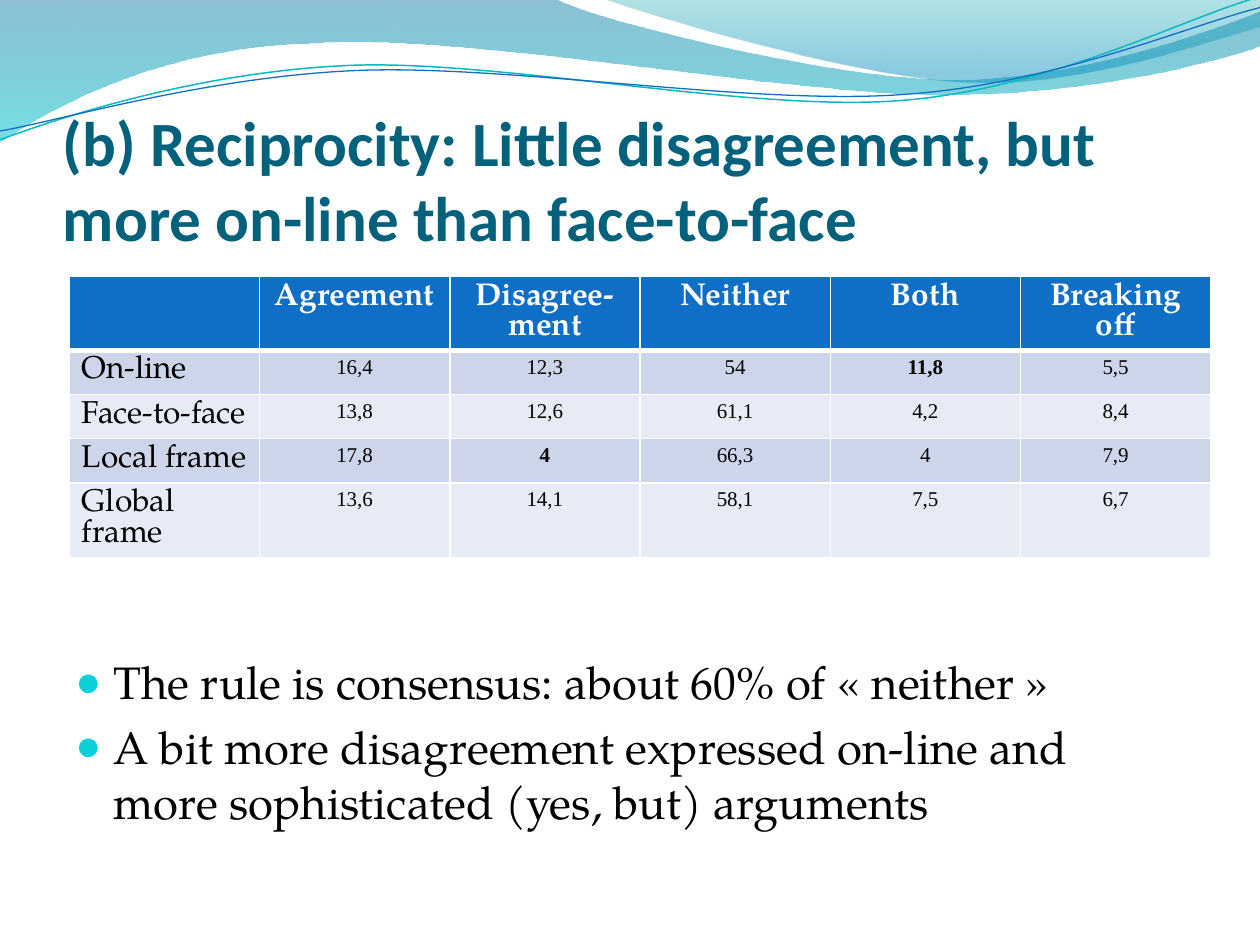
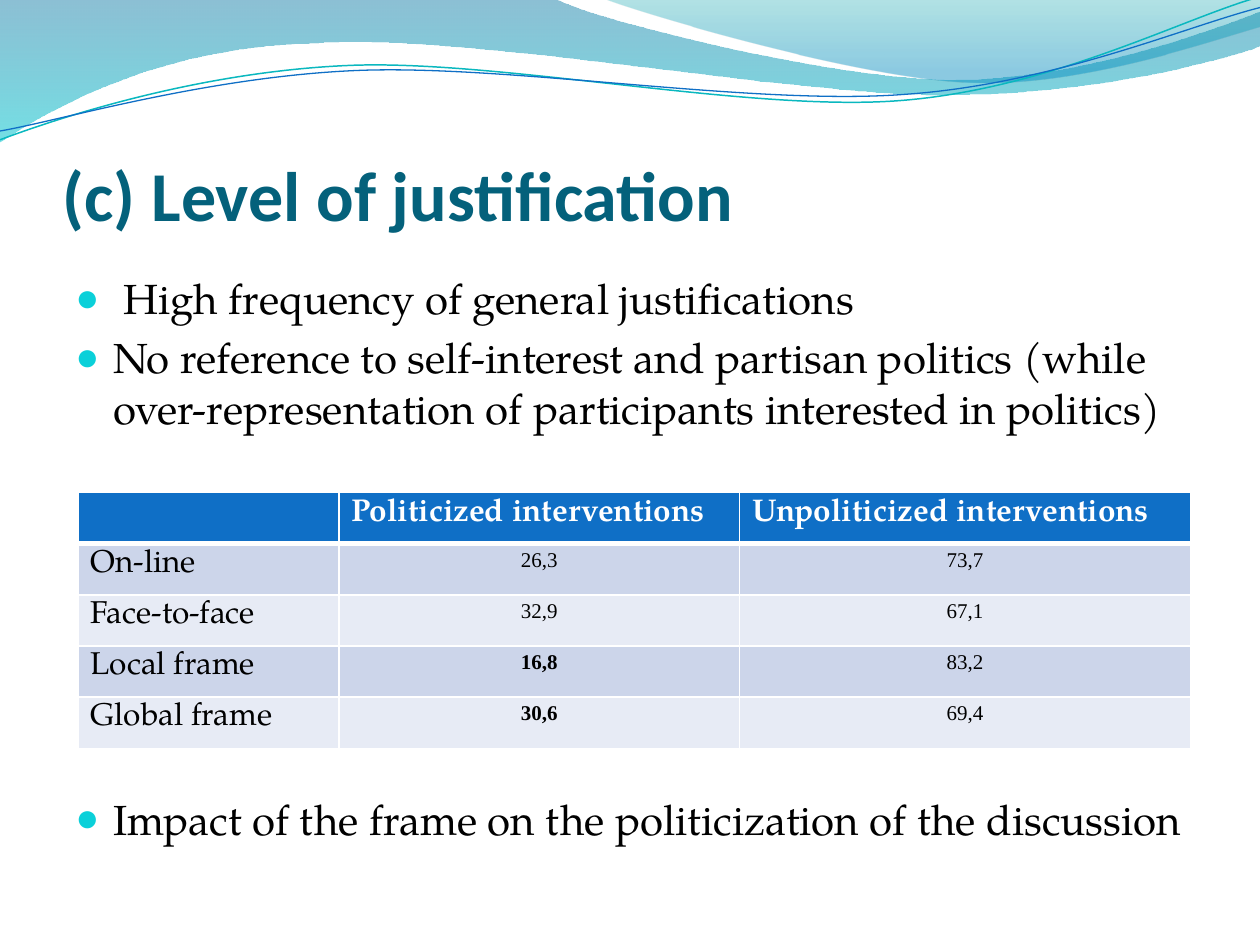
import pptx
import pptx.dml.color
import pptx.enum.text
import pptx.oxml
import pptx.oxml.ns
import pptx.util
from pptx.util import Inches

RGB = pptx.dml.color.RGBColor
ALIGN = pptx.enum.text.PP_ALIGN
ANCHOR = pptx.enum.text.MSO_ANCHOR

TITLE_BLUE = RGB(0x04, 0x61, 0x7B)
HEADER_BLUE = RGB(0x0F, 0x6F, 0xC6)
TEAL_LINE = RGB(0x0A, 0xB8, 0xBF)
BULLET_TEAL = RGB(0x0B, 0xD0, 0xD9)
ROW_DARK = RGB(0xCC, 0xD5, 0xEA)
ROW_LIGHT = RGB(0xE7, 0xEB, 0xF5)
BLACK = RGB(0, 0, 0)
WHITE = RGB(255, 255, 255)
TITLE_FONT, BODY_FONT, NUMBER_FONT = "Calibri", "TeX Gyre Pagella", "Times New Roman"
BODY_LEADING = 1.21
LABEL_LEADING = 17.7

BANDS = [
    {"start": (0, 0),
     "segments": [[(4.4, -0.01)],
                  [(4.76, 0.17), (6.64, 0.63), (7.58, 0.63)],
                  [(8.53, 0.63), (9.58, 0.26), (10, 0.09)],
                  [(10.01, 0.36)],
                  [(9.83, 0.44), (8.7, 0.76), (7.46, 0.75)],
                  [(6.22, 0.75), (3.82, 0.28), (2.57, 0.34)],
                  [(1.29, 0.36), (0.46, 0.83), (-0.01, 1.13)]],
     "stops": [(0, RGB(0x00, 0x74, 0xA1), 45), (1, RGB(0x00, 0xC6, 0xCF), 55)]},
    {"start": (4.79, -0.01),
     "segments": [[(5.09, 0.11), (6.82, 0.62), (7.69, 0.65)],
                  [(8.56, 0.69), (9.61, 0.32), (10, 0.21)],
                  [(10, 0)]],
     "stops": [(0, RGB(0x00, 0xA1, 0xA9), 30), (0.8, RGB(0x00, 0x8B, 0xBF), 45)]},
]
WAVES = [
    {"start": (0, 1.11), "colour": TEAL_LINE, "width": 0.85,
     "segments": [[(0.48, 0.93), (1.58, 0.57), (2.77, 0.52)],
                  [(3.95, 0.47), (5.93, 0.89), (7.13, 0.8)],
                  [(8.33, 0.71), (9.38, 0.15), (9.98, -0.02)]]},
    {"start": (0, 1.04), "colour": HEADER_BLUE, "width": 0.75,
     "segments": [[(0.47, 0.96), (1.64, 0.61), (2.83, 0.56)],
                  [(4.03, 0.51), (5.97, 0.84), (7.17, 0.75)],
                  [(8.36, 0.67), (9.41, 0.21), (10, 0.06)]]},
]

SLIDES = [
    {"title": "(b) Reciprocity: Little disagreement, but more on-line than face-to-face",
     "title_size": 36, "title_height": 1.25, "body_size": 26, "body_inset": 3.07,
     "bullets": [("The rule is consensus: about 60% of «\u00a0neither\u00a0»", 0),
                 ("A bit more disagreement expressed on-line and more sophisticated "
                  "(yes, but) arguments", 5.2)],
     "table_at": (0.55, 2.19), "columns": [1.51] * 6,
     "heights": [0.58, 0.35, 0.35, 0.35, 0.59], "header_align": ALIGN.CENTER,
     "rows": [["", "Agreement", "Disagree-ment", "Neither", "Both", "Breaking off"],
              ["On-line", "16,4", "12,3", "54", "11,8", "5,5"],
              ["Face-to-face", "13,8", "12,6", "61,1", "4,2", "8,4"],
              ["Local frame", "17,8", "4", "66,3", "4", "7,9"],
              ["Global frame", "13,6", "14,1", "58,1", "7,5", "6,7"]],
     "bold": {(1, 4), (3, 2)}},
    {"title": "(c) Level of justification",
     "title_size": 40, "title_height": 1.1, "body_size": 24, "body_inset": 0.04,
     "bullets": [(" High frequency of general justifications", 0),
                 ("No reference to self-interest and partisan politics (while "
                  "over-representation of participants interested in politics)", 4.8),
                 ("Impact of the frame on the politicization of the discussion", 205.8)],
     "table_at": (0.62, 3.91), "columns": [2.07, 3.18, 3.58],
     "heights": [2.03 / 5] * 5, "header_align": ALIGN.LEFT,
     "rows": [["", "Politicized interventions", "Unpoliticized interventions"],
              ["On-line", "26,3", "73,7"],
              ["Face-to-face", "32,9", "67,1"],
              ["Local frame", "16,8", "83,2"],
              ["Global frame", "30,6", "69,4"]],
     "bold": {(3, 1), (4, 1)}},
]


def xml(markup):
    tag, rest = markup.split(" ", 1)
    return pptx.oxml.parse_xml(f"<{tag} {pptx.oxml.ns.nsdecls('a')} {rest}")


def write(paragraph, text, *, font, size, colour, bold=False, align=ALIGN.LEFT, leading=None):
    paragraph.alignment = align
    if leading:
        paragraph.line_spacing = pptx.util.Pt(leading)
    if text:
        run = paragraph.add_run()
        run.text = text
        run.font.name, run.font.size = font, pptx.util.Pt(size)
        run.font.bold, run.font.color.rgb = bold, colour


def add_outline(slide, outline, close):
    segments = outline["segments"]
    points = [(Inches(x), Inches(y)) for x, y in [outline["start"], *sum(segments, [])]]
    builder = slide.shapes.build_freeform(*points[0])
    builder.add_line_segments(points[1:], close=close)
    shape = builder.convert_to_shape()
    shape.shadow.inherit = False
    straight = iter(list(shape._element.spPr.iter(pptx.oxml.ns.qn("a:lnTo"))))
    for segment in segments:
        steps = [next(straight) for _ in segment]
        if len(steps) == 3:
            curve = xml("a:cubicBezTo />")
            steps[0].addprevious(curve)
            for step in steps:
                curve.append(step[0])
                step.getparent().remove(step)
    return shape


def add_backdrop(slide):
    for band in BANDS:
        shape = add_outline(slide, band, True)
        shape.line.fill.background()
        shape.fill.gradient()
        shape.fill.gradient_angle = 270
        for stop, (position, colour, _) in zip(shape.fill.gradient_stops, band["stops"]):
            stop.position, stop.color.rgb = position, colour
        colours = shape._element.spPr.iter(pptx.oxml.ns.qn("a:srgbClr"))
        for colour, (_, _, opacity) in zip(list(colours), band["stops"]):
            colour.append(xml(f'a:alpha val="{opacity * 1000}"/>'))
    for wave in WAVES:
        shape = add_outline(slide, wave, False)
        shape.fill.background()
        shape.line.color.rgb = wave["colour"]
        shape.line.width = pptx.util.Pt(wave["width"])


def add_frame(slide, top, height):
    box = slide.shapes.add_textbox(Inches(0.5), Inches(top), Inches(9), Inches(height))
    box.text_frame.word_wrap = True
    return box.text_frame


def add_title(slide, content):
    frame = add_frame(slide, 0.77, content["title_height"])
    frame.vertical_anchor = ANCHOR.BOTTOM
    frame.margin_left = frame.margin_right = frame.margin_bottom = 0
    write(frame.paragraphs[0], content["title"], font=TITLE_FONT,
          size=content["title_size"], colour=TITLE_BLUE, bold=True)


def add_bullets(slide, content):
    frame = add_frame(slide, 2.12, 4.8)
    frame.margin_top = Inches(content["body_inset"])
    size = content["body_size"]
    for index, (bullet, gap) in enumerate(content["bullets"]):
        paragraph = frame.add_paragraph() if index else frame.paragraphs[0]
        write(paragraph, bullet, font=BODY_FONT, size=size, colour=BLACK,
              leading=round(size * BODY_LEADING, 1))
        paragraph.space_before = pptx.util.Pt(gap)
        properties = paragraph._p.get_or_add_pPr()
        properties.set("marL", str(Inches(0.3)))
        properties.set("indent", str(-Inches(0.3)))
        for markup in (f'a:buClr ><a:srgbClr val="{BULLET_TEAL}"/></a:buClr>',
                       'a:buSzPct val="95000"/>', f'a:buFont typeface="{NUMBER_FONT}"/>',
                       'a:buChar char="●"/>'):
            properties.append(xml(markup))


def add_borders(cell, header):
    properties = cell._tc.get_or_add_tcPr()
    for index, side in enumerate("LRTB"):
        width = pptx.util.Pt(3 if header and side == "B" else 1)
        properties.insert(index, xml(
            f'a:ln{side} w="{width}"><a:solidFill><a:srgbClr val="{WHITE}"/>'
            f'</a:solidFill></a:ln{side}>'))


def add_results(slide, content):
    rows, columns, heights = content["rows"], content["columns"], content["heights"]
    left, top = content["table_at"]
    table = slide.shapes.add_table(len(rows), len(columns), Inches(left), Inches(top),
                                   Inches(sum(columns)), Inches(sum(heights))).table
    for column, width in zip(table.columns, columns):
        column.width = Inches(width)
    for r, (texts, height) in enumerate(zip(rows, heights)):
        table.rows[r].height = Inches(height)
        for c, text in enumerate(texts):
            cell = table.cell(r, c)
            cell.fill.solid()
            cell.fill.fore_color.rgb = (ROW_DARK if r % 2 else ROW_LIGHT) if r else HEADER_BLUE
            add_borders(cell, r == 0)
            style = {"font": BODY_FONT, "size": 18, "colour": BLACK, "leading": LABEL_LEADING}
            if r == 0:
                style.update(colour=WHITE, bold=True, align=content["header_align"])
            elif c:
                style = {"font": NUMBER_FONT, "size": 12, "colour": BLACK,
                         "bold": (r, c) in content["bold"], "align": ALIGN.CENTER}
                cell.margin_left = cell.margin_right = Inches(0.04)
                cell.margin_top = cell.margin_bottom = Inches(0.04)
            write(cell.text_frame.paragraphs[0], text, **style)


def main():
    deck = pptx.Presentation()
    deck.slide_width, deck.slide_height = Inches(10), Inches(7.5)
    for content in SLIDES:
        slide = deck.slides.add_slide(deck.slide_layouts[6])
        add_backdrop(slide)
        add_title(slide, content)
        add_bullets(slide, content)
        add_results(slide, content)
    deck.save("out.pptx")


if __name__ == "__main__":
    main()
